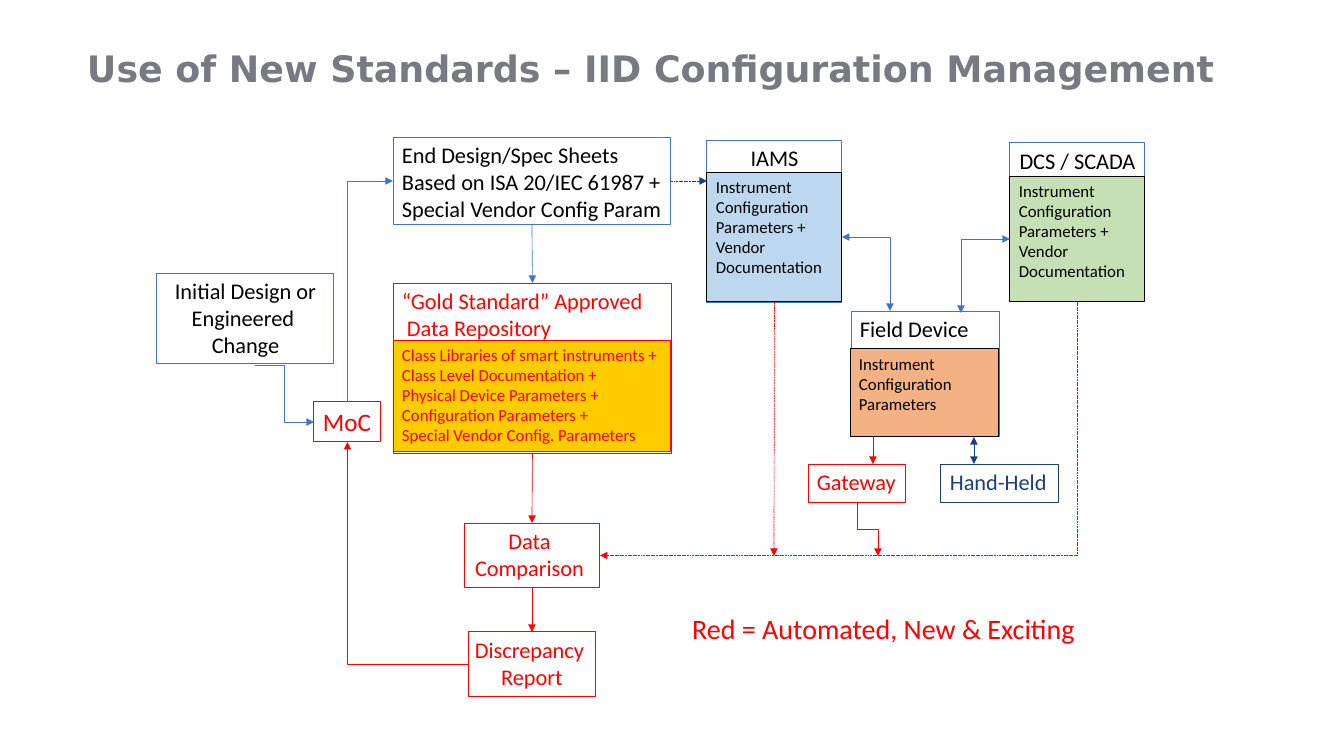
from lxml import etree
from pptx import Presentation
from pptx.dml.color import RGBColor
from pptx.enum.dml import MSO_LINE
from pptx.enum.shapes import MSO_CONNECTOR, MSO_SHAPE
from pptx.enum.text import MSO_ANCHOR, PP_ALIGN
from pptx.oxml.ns import qn
from pptx.util import Pt

PX = 914400 // 91
WIDTH, HEIGHT = 1344, 756

RED = RGBColor(0xFF, 0x00, 0x00)
BLUE = RGBColor(0x44, 0x72, 0xC4)
NAVY = RGBColor(0x1C, 0x3E, 0x7D)
BLACK = RGBColor(0x00, 0x00, 0x00)
GREY = RGBColor(0x77, 0x7A, 0x80)
GOLD = RGBColor(0xFF, 0xCC, 0x00)
ORANGE = RGBColor(0xF4, 0xB1, 0x83)
GREEN = RGBColor(0xC5, 0xE0, 0xB4)
SKY = RGBColor(0xBD, 0xD7, 0xEE)

LEFT, CENTER = PP_ALIGN.LEFT, PP_ALIGN.CENTER
TOP, MIDDLE = MSO_ANCHOR.TOP, MSO_ANCHOR.MIDDLE
RECTANGLE = MSO_SHAPE.RECTANGLE
STRAIGHT, ELBOW = MSO_CONNECTOR.STRAIGHT, MSO_CONNECTOR.ELBOW
DASH = MSO_LINE.SQUARE_DOT
SIDE_TOP, SIDE_LEFT, SIDE_BOTTOM, SIDE_RIGHT = range(4)

# Content: boxes as name, (left, top, width, height), text, line, fill, text format
TITLE = "Use of New Standards – IID Configuration Management"
LEGEND = "Red = Automated, New & Exciting"
SETTINGS = "Instrument Configuration Parameters + Vendor Documentation"
BODY = dict(size=13.3)
BOXES = [
    ("gold", (393, 283, 279, 170), "“Gold Standard” Approved\n Data Repository",
     RED, None, dict(color=RED)),
    ("comparison", (464, 523, 136, 65), "Data \nComparison ", RED, None,
     dict(color=RED, align=CENTER, wrap=False)),
    ("report", (468, 632, 128, 65), "Discrepancy \nReport", RED, None,
     dict(color=RED, align=CENTER, wrap=False)),
    ("design", (393, 137, 278, 88),
     "End Design/Spec Sheets\nBased on ISA 20/IEC 61987 +\nSpecial Vendor Config Param",
     BLUE, None, dict(wrap=False)),
    ("moc", (314, 402, 67, 40), "MoC", RED, None,
     dict(color=RED, size=19.9, wrap=False)),
    ("iams", (707, 140, 135, 163), "IAMS", BLUE, None,
     dict(align=CENTER, wrap=False)),
    ("field", (851, 311, 149, 126), "Field Device", BLUE, None, dict(wrap=False)),
    ("dcs", (1010, 143, 135, 159), "DCS / SCADA", BLUE, None,
     dict(align=CENTER, wrap=False)),
    ("field body", (850, 349, 149, 88), "Instrument Configuration Parameters",
     BLACK, ORANGE, BODY),
    ("dcs body", (1010, 176, 135, 126), SETTINGS, BLACK, GREEN, BODY),
    ("iams body", (707, 172, 135, 130), SETTINGS, BLACK, SKY, BODY),
    ("gold body", (393, 340, 278, 112),
     "Class Libraries of smart instruments + Class Level Documentation +\n"
     "Physical Device Parameters +\nConfiguration Parameters +\n"
     "Special Vendor Config. Parameters", RED, GOLD, dict(size=13.3, color=RED)),
    ("change", (157, 273, 177, 91), "Initial Design or Engineered \nChange",
     BLUE, None, dict(align=CENTER)),
    ("hand-held", (941, 464, 118, 38), "Hand-Held", NAVY, None,
     dict(color=NAVY, wrap=False)),
    ("gateway", (808, 464, 98, 38), "Gateway", RED, None,
     dict(color=RED, wrap=False)),
]

# Ends are (box name, side) when joined, else (x, y); arrows: "head", "tail" or both
STRAIGHT_LINES = [
    (("gold", SIDE_BOTTOM), ("comparison", SIDE_TOP), RED, "tail", None),
    (("comparison", SIDE_BOTTOM), ("report", SIDE_TOP), RED, "tail", None),
    (("design", SIDE_BOTTOM), ("gold", SIDE_TOP), BLUE, "tail", None),
    (("iams body", SIDE_BOTTOM), (774, 556), RED, "tail", DASH),
    ((873, 437), (873, 464), RED, "tail", None),
    ((974, 437), (974, 464), NAVY, "head tail", None),
    (("design", SIDE_RIGHT), (707, 181), NAVY, "tail", DASH),
]
# One bend, leaving the first end horizontally
CORNER_LINES = [
    (("design", SIDE_LEFT), ("moc", SIDE_TOP), BLUE, "head", None),
    (("report", SIDE_LEFT), ("moc", SIDE_BOTTOM), RED, "tail", None),
    (("dcs body", SIDE_LEFT), (961, 313), BLUE, "head tail", None),
    (("comparison", SIDE_RIGHT), ("dcs body", SIDE_BOTTOM), RED, "head", DASH),
    (("iams body", SIDE_RIGHT), (890, 311), BLUE, "head tail", None),
]
CHANGE_LINE = ((255, 365), ("moc", SIDE_LEFT), BLUE, "tail", None)
GATEWAY_LINE = (("gateway", SIDE_BOTTOM), (878, 556), RED, "tail", None)

deck = Presentation()
deck.slide_width, deck.slide_height = WIDTH * PX, HEIGHT * PX
page = deck.slides.add_slide(deck.slide_layouts[6])
boxes = {}


def write(shape, text, size=17.7, color=BLACK, font="Calibri", bold=False,
          align=LEFT, anchor=TOP, wrap=True):
    frame = shape.text_frame
    frame.word_wrap = wrap
    frame.vertical_anchor = anchor
    frame.text = text
    for para in frame.paragraphs:
        para.alignment = align
        for span in para.runs:
            span.font.size, span.font.name = Pt(size), font
            span.font.bold, span.font.color.rgb = bold, color


def add_label(left, top, width, height, text, **style):
    label = page.shapes.add_textbox(left * PX, top * PX, width * PX, height * PX)
    write(label, text, **style)
    return label


def add_box(name, place, text, line, fill, style):
    box = page.shapes.add_shape(RECTANGLE, *(n * PX for n in place))
    box.shadow.inherit = False
    box.line.color.rgb, box.line.width = line, Pt(0.75)
    if fill is None:
        box.fill.background()
    else:
        box.fill.solid()
        box.fill.fore_color.rgb = fill
    write(box, text, **style)
    boxes[name] = box


def point(end):
    """Position of an end in EMU."""
    if end[0] not in boxes:
        return end[0] * PX, end[1] * PX
    box, side = boxes[end[0]], end[1]
    across = {SIDE_LEFT: 0, SIDE_RIGHT: box.width}.get(side, box.width // 2)
    down = {SIDE_TOP: 0, SIDE_BOTTOM: box.height}.get(side, box.height // 2)
    return box.left + across, box.top + down


def add_line(kind, start, stop, color, arrows, dash):
    line = page.shapes.add_connector(kind, *point(start), *point(stop))
    if start[0] in boxes:
        line.begin_connect(boxes[start[0]], start[1])
    if stop[0] in boxes:
        line.end_connect(boxes[stop[0]], stop[1])
    line.line.color.rgb, line.line.width = color, Pt(0.5)
    if dash:
        line.line.dash_style = dash
    properties = line._element.spPr
    outline = properties.find(qn("a:ln"))
    for end in arrows.split():
        etree.SubElement(outline, qn(f"a:{end}End"), type="triangle")
    etree.SubElement(properties, qn("a:effectLst"))
    return line


# Title and boxes
title = add_label(75, 42, 1189, 51, TITLE, size=28.8, color=GREY,
                  font="DejaVu Sans", bold=True, anchor=MIDDLE)
title.text_frame.margin_left = title.text_frame.margin_right = 12 * PX
for box_row in BOXES:
    add_box(*box_row)
add_label(666, 607, 435, 43, LEGEND, size=22.2, color=RED, align=CENTER)

# Lines
for line_row in STRAIGHT_LINES:
    add_line(STRAIGHT, *line_row)
for line_row in CORNER_LINES:
    corner = add_line(ELBOW, *line_row)
    corner._element.spPr.find(qn("a:prstGeom")).set("prst", "bentConnector2")
add_line(ELBOW, *CHANGE_LINE)

# The gateway line leaves downwards, so its frame is turned a quarter
drop = add_line(ELBOW, *GATEWAY_LINE)
shift = (drop.height - drop.width) // 2
drop.left, drop.top = drop.left - shift, drop.top + shift
drop.width, drop.height = drop.height, drop.width
turn = drop._element.spPr.find(qn("a:xfrm"))
turn.set("rot", str(270 * 60000))
turn.set("flipH", "1")

deck.save("out.pptx")
